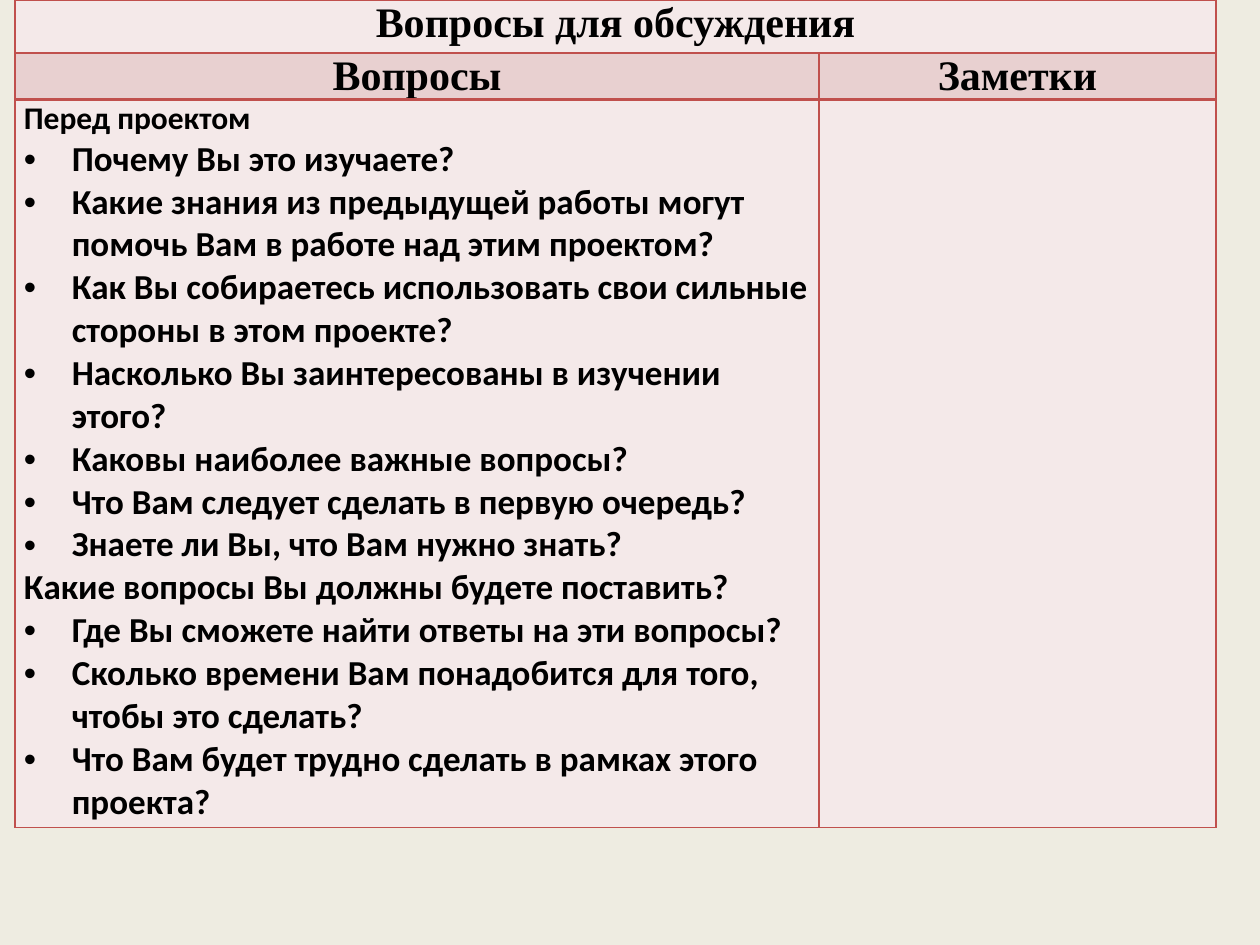
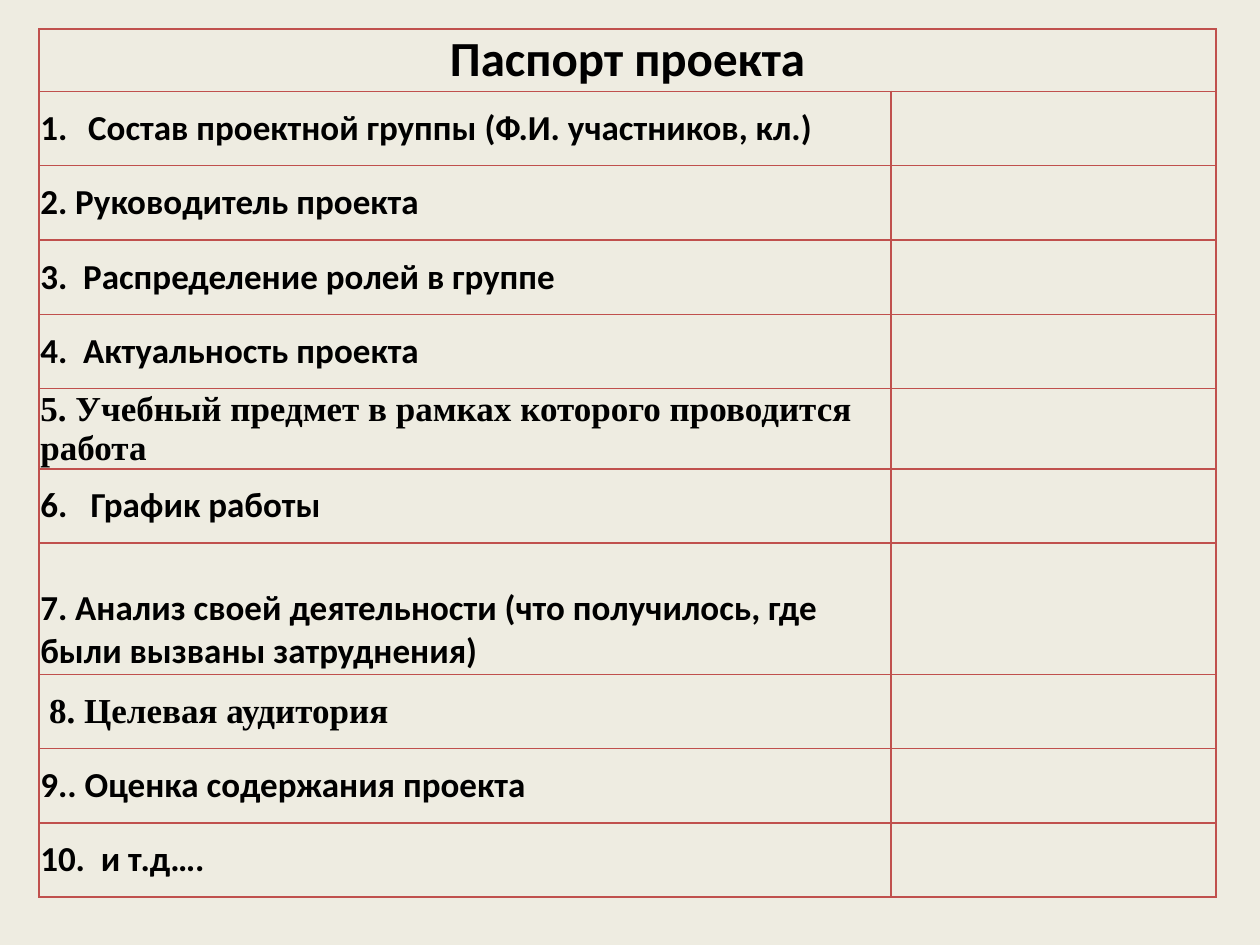
import dataclasses

import lxml.etree
import pptx
import pptx.dml.color
import pptx.enum.text
import pptx.oxml.ns
import pptx.util

# Shared look; 100 px make one inch
SCALE = 9144
PAPER, RED, PINK, ROSE, BLACK = "EEECE1", "C0504D", "F4E9E9", "E8D0D0", "000000"
SANS, SERIF = "Calibri", "Times New Roman"
CENTER = pptx.enum.text.PP_ALIGN.CENTER
MIDDLE = pptx.enum.text.MSO_ANCHOR.MIDDLE
HANG = 38


@dataclasses.dataclass
class Line:
    text: str
    size: int = 20
    font: str = SANS
    mid: bool = False
    left: int = 0
    hang: int = 0
    mark: str = ""


@dataclasses.dataclass
class Box:
    lines: list[Line]
    fill: str = ""
    top: float = 1
    pad: int = 0


def px(num: int) -> int:
    return pptx.util.Emu(num * SCALE)


def color(code: str) -> pptx.dml.color.RGBColor:
    return pptx.dml.color.RGBColor.from_string(code)


def add(parent, tag: str, **attrs):
    node = lxml.etree.SubElement(parent, pptx.oxml.ns.qn(tag))
    for key, val in attrs.items():
        node.set(key, str(val))
    return node


def write(para, text: str, *, size: int, font: str, mid: bool, left: int,
          hang: int, mark: str) -> None:
    run = para.add_run()
    run.text = text
    run.font.size = pptx.util.Pt(size)
    run.font.name = font
    run.font.bold = True
    run.font.color.rgb = color(BLACK)
    if mid:
        para.alignment = CENTER
    prop = para._p.get_or_add_pPr()
    prop.set("marL", str(px(left + hang)))
    prop.set("indent", str(px(-hang)))
    if mark == "1.":
        add(prop, "a:buFont", typeface="+mj-lt")
        add(prop, "a:buAutoNum", type="arabicPeriod")
    elif mark:
        add(prop, "a:buFont", typeface="Arial")
        add(prop, "a:buChar", char=mark)
    else:
        add(prop, "a:buNone")


def edge(cell, top: float) -> None:
    prop = cell._tc.get_or_add_tcPr()
    for side, width in (("L", 1), ("R", 1), ("T", top), ("B", 1)):
        line = add(prop, "a:ln" + side, w=pptx.util.Pt(width))
        add(add(line, "a:solidFill"), "a:srgbClr", val=RED)


def fill_cell(cell, box: Box, inset: tuple[int, int], anchor) -> None:
    edge(cell, box.top)
    if box.fill:
        cell.fill.solid()
        cell.fill.fore_color.rgb = color(box.fill)
    else:
        cell.fill.background()
    if not box.lines:
        return
    cell.margin_left = cell.margin_right = px(inset[0])
    cell.margin_top, cell.margin_bottom = px(inset[1] + box.pad), px(inset[1])
    cell.vertical_anchor = anchor
    for num, line in enumerate(box.lines):
        para = cell.text_frame.add_paragraph() if num else cell.text_frame.paragraphs[0]
        write(para, **dataclasses.asdict(line))


def grid(deck, left: int, top: int, cols: list[int], rows: list[int],
         boxes: list[list[Box]], inset: tuple[int, int], anchor=None) -> None:
    """Add a slide with one table whose first row is a merged title."""
    slide = deck.slides.add_slide(deck.slide_layouts[6])
    slide.background.fill.solid()
    slide.background.fill.fore_color.rgb = color(PAPER)
    table = slide.shapes.add_table(len(rows), len(cols), px(left), px(top),
                                   px(sum(cols)), px(sum(rows))).table
    table.first_row = table.horz_banding = False
    for col, width in zip(table.columns, cols):
        col.width = px(width)
    for row, high in zip(table.rows, rows):
        row.height = px(high)
    table.cell(0, 0).merge(table.cell(0, 1))
    for i, row in enumerate(boxes):
        for j, box in enumerate(row):
            fill_cell(table.cell(i, j), box, inset, anchor)


def head(text: str, size: int, font: str) -> list[Line]:
    return [Line(text, size, font, mid=True)]


def ask(text: str) -> Line:
    return Line(text, hang=HANG, mark="•")


# Slide 1: questions and notes
FIRST = [
    "Почему Вы это изучаете?",
    "Какие знания из предыдущей работы могут помочь Вам в работе над этим проектом?",
    "Как Вы собираетесь использовать свои сильные стороны в этом проекте?",
    "Насколько Вы заинтересованы в изучении этого?",
    "Каковы наиболее важные вопросы?",
    "Что Вам следует сделать в первую очередь?",
    "Знаете ли Вы, что Вам нужно знать?",
]
LAST = [
    "Где Вы сможете найти ответы на эти вопросы?",
    "Сколько времени Вам понадобится для того, чтобы это сделать?",
    "Что Вам будет трудно сделать в рамках этого проекта?",
]


def talk(deck) -> None:
    body = [Line("Перед проектом", 18), *map(ask, FIRST),
            Line("Какие вопросы Вы должны будете поставить?", hang=HANG),
            *map(ask, LAST)]
    boxes = [
        [Box(head("Вопросы для обсуждения", 24, SERIF), PINK), Box([], PINK)],
        [Box(head(text, 24, SERIF), ROSE) for text in ("Вопросы", "Заметки")],
        [Box(body, PINK, top=2), Box([], PINK, top=2)],
    ]
    grid(deck, 12, 0, [638, 315], [42, 34, 578], boxes, (7, 0))


# Slide 2: project passport; a tab leads to the hanging indent
ITEMS = [
    Box([Line("Состав проектной группы (Ф.И. участников, кл.)", hang=HANG, mark="1.")]),
    Box([Line("2. Руководитель проекта")]),
    Box([Line("3.\tРаспределение ролей в группе", hang=34)]),
    Box([Line("4.\tАктуальность проекта", hang=34)]),
    Box([Line("5. Учебный предмет в рамках которого проводится работа", font=SERIF)]),
    Box([Line("6.\tГрафик работы", hang=40)]),
    Box([Line("7. Анализ своей деятельности (что получилось, где были вызваны затруднения)")],
        pad=34),
    Box([Line("8. Целевая аудитория", font=SERIF, left=7)]),
    Box([Line("9.. Оценка содержания проекта")]),
    Box([Line("10.\tи т.д….", hang=48)]),
]


def card(deck) -> None:
    boxes = [[Box(head("Паспорт проекта", 28, SANS)), Box([])]]
    boxes += [[item, Box([])] for item in ITEMS]
    grid(deck, 31, 23, [676, 258], [17] + [59] * len(ITEMS), boxes, (1, 1), MIDDLE)


def main() -> None:
    deck = pptx.Presentation()
    deck.slide_width, deck.slide_height = px(1000), px(750)
    talk(deck)
    card(deck)
    deck.save("out.pptx")


if __name__ == "__main__":
    main()
